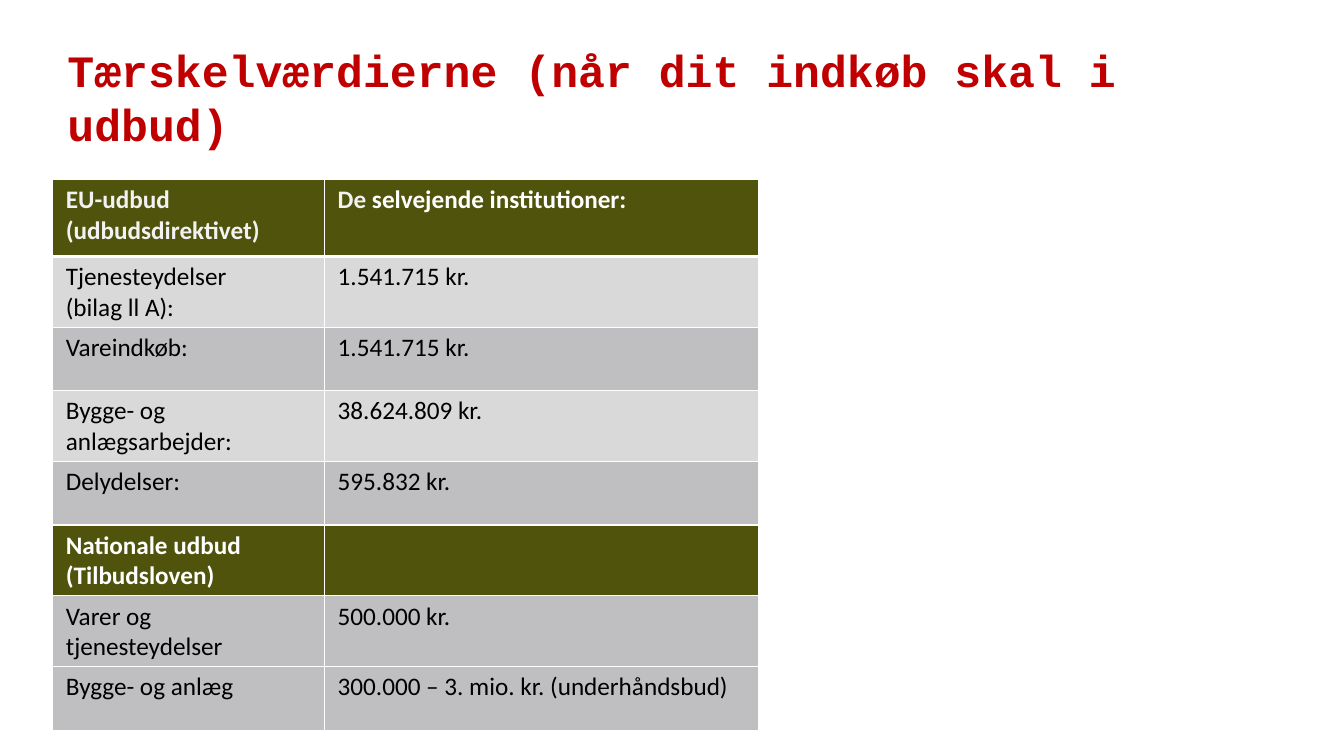
from lxml.etree import SubElement
from pptx import Presentation
from pptx.dml.color import RGBColor
from pptx.enum.text import MSO_ANCHOR
from pptx.oxml.ns import qn
from pptx.util import Cm, Pt

OLIVE = RGBColor(0x4F, 0x53, 0x0C)
LIGHT = RGBColor(0xD9, 0xD9, 0xD9)
GREY = RGBColor(0xBF, 0xBF, 0xC1)
RED = RGBColor(0xC0, 0x00, 0x00)
BLACK = RGBColor(0x00, 0x00, 0x00)
WHITE = RGBColor(0xFF, 0xFF, 0xFF)
OFF_WHITE = RGBColor(0xF2, 0xF2, 0xF2)

HEADING = "Tærskelværdierne (når dit indkøb skal i udbud)"
THRESHOLDS = [
    (OLIVE, [[("EU-udbud (udbudsdirektivet)\u00a0", OFF_WHITE)]],
     [[("De ", OFF_WHITE), ("selvejende institutioner:\u00a0", WHITE)]]),
    (LIGHT, [[("Tjenesteydelser", BLACK)], [("(bilag ll A):", BLACK)]],
     [[("1.541.715 kr.", BLACK)]]),
    (GREY, [[("Vareindkøb:", BLACK)]], [[("1.541.715 kr.", BLACK)]]),
    (LIGHT, [[("Bygge- og anlægsarbejder:", BLACK)]], [[("38.624.809 kr.", BLACK)]]),
    (GREY, [[("Delydelser:", BLACK)]], [[("595.832 kr.", BLACK)]]),
    (OLIVE, [[("Nationale udbud", WHITE)], [("(Tilbudsloven)", WHITE)]], []),
    (GREY, [[("Varer og tjenesteydelser", BLACK)]], [[("500.000 kr.", BLACK)]]),
    (GREY, [[("Bygge- og anlæg", BLACK)]],
     [[("300.000 – 3. mio. kr. (underhåndsbud)", BLACK)]]),
]
COLUMN_WIDTHS = [Cm(6.85), Cm(10.95)]
HEADER_HEIGHT, ROW_HEIGHT = Cm(1.93), Cm(1.6)


def add_run(paragraph, text, font, size, color, bold):
    run = paragraph.add_run()
    run.text = text
    run.font.name = font
    run.font.size = Pt(size)
    run.font.bold = bold
    run.font.color.rgb = color


def add_borders(cell, top, bottom):
    properties = cell._tc.get_or_add_tcPr()
    edges = [("a:lnL", 1), ("a:lnR", 1), ("a:lnT", top), ("a:lnB", bottom)]
    for tag, width in edges:
        line = SubElement(properties, qn(tag), w=str(Pt(width)))
        fill = SubElement(line, qn("a:solidFill"))
        SubElement(fill, qn("a:srgbClr"), val=str(WHITE))


def fill_cell(cell, color, paragraphs, top, bottom):
    add_borders(cell, top, bottom)
    cell.fill.solid()
    cell.fill.fore_color.rgb = color
    cell.margin_left = cell.margin_right = Cm(0.33)
    cell.margin_top = cell.margin_bottom = Cm(0.13)
    frame = cell.text_frame
    frame.paragraphs[0].font.size = Pt(18)
    for index, runs in enumerate(paragraphs):
        paragraph = frame.add_paragraph() if index else frame.paragraphs[0]
        for text, text_color in runs:
            add_run(paragraph, text, "Calibri", 18, text_color, color == OLIVE)


def add_heading(slide):
    frame = slide.shapes.add_textbox(Cm(1.7), Cm(1.73), Cm(30.53), Cm(2.06)).text_frame
    frame.word_wrap = True
    frame.vertical_anchor = MSO_ANCHOR.BOTTOM
    frame.margin_left = frame.margin_right = frame.margin_top = frame.margin_bottom = 0
    add_run(frame.paragraphs[0], HEADING, "Courier New", 32, RED, True)


def add_thresholds(slide):
    heights = [HEADER_HEIGHT] + [ROW_HEIGHT] * (len(THRESHOLDS) - 1)
    table = slide.shapes.add_table(
        len(THRESHOLDS), len(COLUMN_WIDTHS), Cm(1.33), Cm(4.53),
        sum(COLUMN_WIDTHS), sum(heights)).table
    for column, width in zip(table.columns, COLUMN_WIDTHS):
        column.width = width
    for row, (color, *entries) in enumerate(THRESHOLDS):
        table.rows[row].height = heights[row]
        top = 3 if row == 1 else 1
        bottom = 3 if row == 0 else 1
        for column, paragraphs in enumerate(entries):
            fill_cell(table.cell(row, column), color, paragraphs, top, bottom)


def main():
    presentation = Presentation()
    presentation.slide_width, presentation.slide_height = Cm(33.87), Cm(19.05)
    slide = presentation.slides.add_slide(presentation.slide_layouts[6])
    add_heading(slide)
    add_thresholds(slide)
    presentation.save("out.pptx")


if __name__ == "__main__":
    main()
